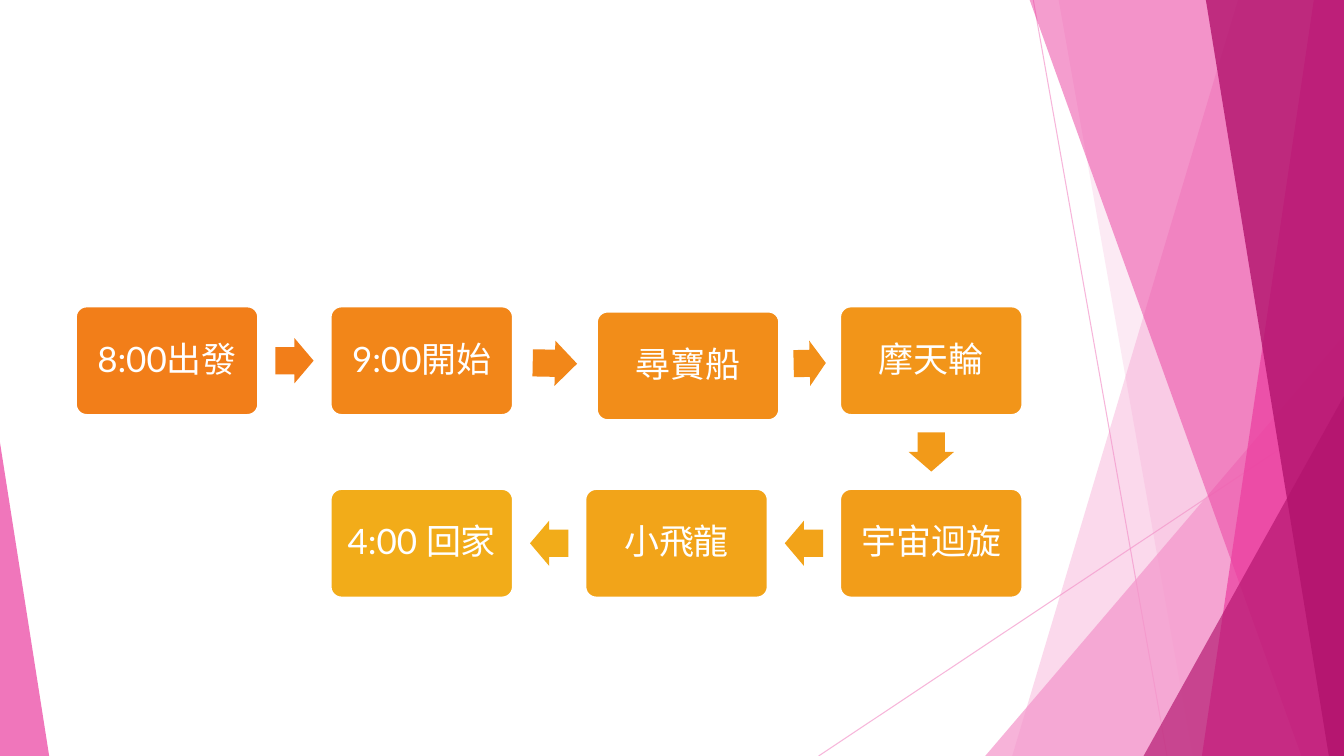
from math import atan2, degrees

from lxml import etree
from pptx import Presentation
from pptx.dml.color import RGBColor
from pptx.enum.shapes import MSO_CONNECTOR as CONN, MSO_SHAPE as SHAPE
from pptx.enum.text import MSO_ANCHOR as ANCHOR, PP_ALIGN as ALIGN
from pptx.oxml.ns import qn
from pptx.util import Cm, Pt

SLIDE_W, SLIDE_H = 33.87, 19.05
PALE, PINK, DEEP = "F496CB", "EB3D9F", "B2136D"
BOX_W, BOX_H = 4.6, 2.74
COL_STEP, ROW_STEP = 6.42, 4.6

# Label, column, row, shift (x, y), box colour, colour of the arrow that follows
STEPS = [
    ("8:00出發", 0, 0, (0, 0), "F27E19", "F27E19"),
    ("9:00開始", 1, 0, (0, 0), "F28619", "F28719"),
    ("尋寶船", 2, 0, (0.29, 0.13), "F28D19", "F29019"),
    ("摩天輪", 3, 0, (0, 0), "F29519", "F29A19"),
    ("宇宙迴旋", 3, 1, (0, 0), "F29D19", "F2A319"),
    ("小飛龍", 2, 1, (0, 0), "F2A419", "F2AC19"),
    ("4:00 回家", 1, 1, (0, 0), "F2AC19", None),
]


def rgb(value):
    return RGBColor.from_string(value)


def set_alpha(s, percent):
    color = next(s._element.spPr.iter(qn("a:srgbClr")))
    etree.SubElement(color, qn("a:alpha")).set("val", str(percent * 1000))


def paint(s, color, alpha=None):
    s.shadow.inherit = False
    s.fill.solid()
    s.fill.fore_color.rgb = rgb(color)
    s.line.fill.background()
    if alpha is not None:
        set_alpha(s, alpha)


def add_hairline(slide, x1, y1, x2, y2):
    s = slide.shapes.add_connector(CONN.STRAIGHT, Cm(x1), Cm(y1), Cm(x2), Cm(y2))
    s.line.color.rgb = rgb(PALE)
    s.line.width = Pt(0.75)
    set_alpha(s, 70)
    etree.SubElement(s._element.spPr, qn("a:effectLst"))


def add_facet(slide, right, top, height, inset_top, inset_bottom, color, alpha):
    """Band against the right edge with a slanted left side."""
    bottom = top + height
    fb = slide.shapes.build_freeform(Cm(right - inset_top), Cm(top))
    fb.add_line_segments([(Cm(right), Cm(top)), (Cm(right), Cm(bottom)),
                          (Cm(right - inset_bottom), Cm(bottom))])
    paint(fb.convert_to_shape(), color, alpha)


def add_corner(slide, left, bottom, width, height, apex, color, alpha):
    s = slide.shapes.add_shape(SHAPE.ISOSCELES_TRIANGLE, Cm(left), Cm(bottom - height),
                               Cm(width), Cm(height))
    s.adjustments[0] = apex
    paint(s, color, alpha)


def add_backdrop(slide, left, top, width, height):
    right, bottom = left + width, top + height
    # Hairlines
    add_hairline(slide, left + 26.04, top, left + 29.41, bottom)
    add_hairline(slide, right, top + 10.24, right - 13.24, bottom)
    # Overlapping facets on the right
    add_facet(slide, right, top, height, 2.67, 8.36, PALE, 36)
    add_facet(slide, right, top, height, 7.19, 3.81, PALE, 20)
    add_corner(slide, right - 9.04, bottom, 9.04, 10.59, 1, PALE, 72)
    add_facet(slide, right, top, height, 7.92, 1.07, PINK, 50)
    add_facet(slide, right, top, height, 0.76, 3.58, PINK, 70)
    add_facet(slide, right, top, height, 3.48, 0.38, DEEP, 80)
    add_corner(slide, right - 5.05, bottom, 5.05, 9.07, 1, DEEP, 66)
    # Corner on the left
    add_corner(slide, left, bottom, 1.24, 7.9, 0, PINK, 70)


def add_step(slide, x, y, label, color):
    s = slide.shapes.add_shape(SHAPE.ROUNDED_RECTANGLE, Cm(x), Cm(y), Cm(BOX_W), Cm(BOX_H))
    s.adjustments[0] = 0.1
    paint(s, color)
    s.line.color.rgb = rgb("FFFFFF")
    s.line.width = Pt(1.5)
    tf = s.text_frame
    tf.word_wrap = True
    tf.vertical_anchor = ANCHOR.MIDDLE
    tf.margin_left = tf.margin_right = tf.margin_top = tf.margin_bottom = Cm(0.33)
    p = tf.paragraphs[0]
    p.text = label
    p.alignment = ALIGN.CENTER
    p.line_spacing = 0.9
    p.font.name = "Lato"
    p.font.size = Pt(25)
    p.font.color.rgb = rgb("FFFFFF")


def add_arrow(slide, start, end, color):
    """Arrow midway between two boxes, given by their top left corners."""
    dx, dy = end[0] - start[0], end[1] - start[1]
    gap = max(abs(dx) - BOX_W, abs(dy) - BOX_H)
    width, height = 0.53 * gap, 1.14
    center_x = (start[0] + end[0] + BOX_W) / 2
    center_y = (start[1] + end[1] + BOX_H) / 2
    s = slide.shapes.add_shape(SHAPE.RIGHT_ARROW, Cm(center_x - width / 2),
                               Cm(center_y - height / 2), Cm(width), Cm(height))
    s.adjustments[0], s.adjustments[1] = 0.6, 0.5
    s.rotation = degrees(atan2(dy, dx))
    paint(s, color)


def add_flow(slide, left, top):
    corners = [(left + col * COL_STEP + dx, top + row * ROW_STEP + dy)
               for _, col, row, (dx, dy), _, _ in STEPS]
    for i, (label, _, _, _, color, arrow_color) in enumerate(STEPS):
        add_step(slide, *corners[i], label, color)
        if arrow_color:
            add_arrow(slide, corners[i], corners[i + 1], arrow_color)


def main():
    prs = Presentation()
    prs.slide_width, prs.slide_height = Cm(SLIDE_W), Cm(SLIDE_H)
    slide = prs.slides.add_slide(prs.slide_layouts[6])
    add_backdrop(slide, 0, 0, SLIDE_W, SLIDE_H)
    add_flow(slide, 1.91, 7.72)
    prs.save("out.pptx")


if __name__ == "__main__":
    main()
